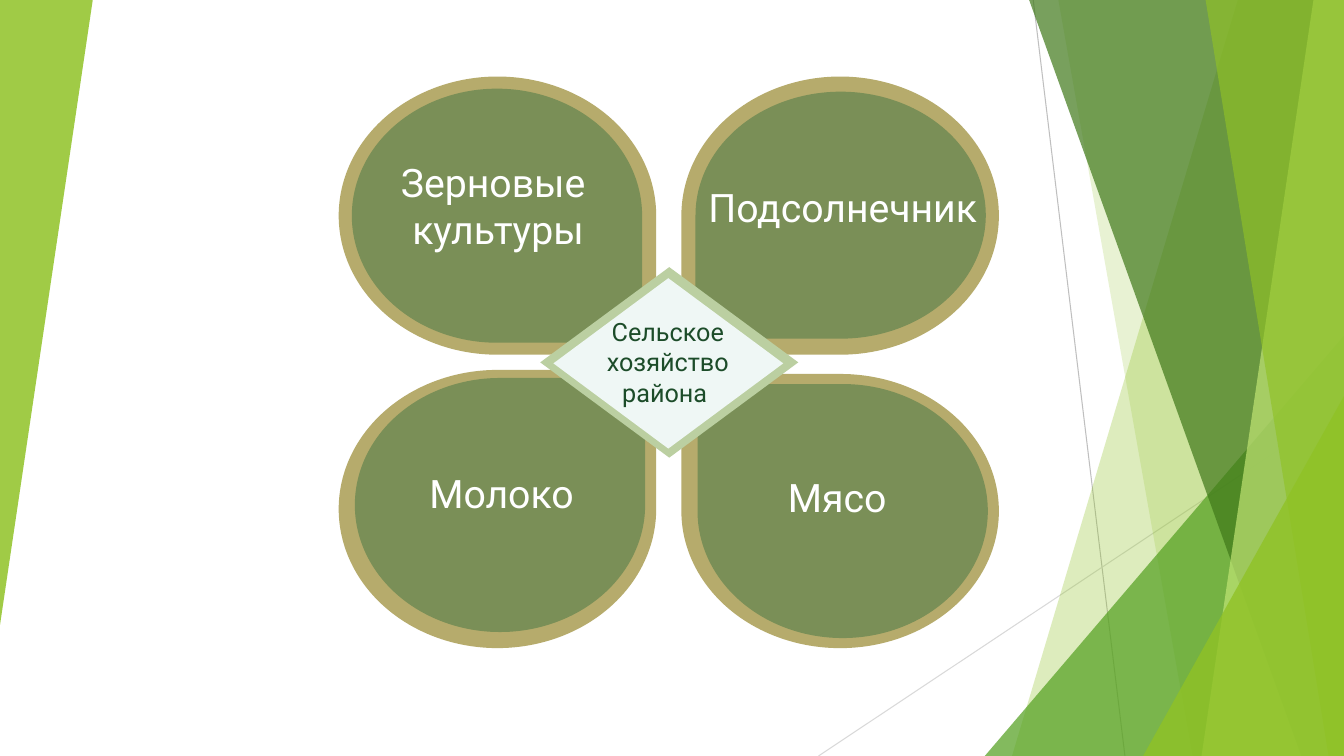
import pptx
import pptx.util
import pptx.dml.color
import pptx.enum.shapes
import pptx.enum.text
import pptx.oxml.ns
import pptx.oxml.xmlchemy
from collections import namedtuple

Box = namedtuple("Box", "left top width height")
SHAPE = pptx.enum.shapes.MSO_SHAPE
CELL = pptx.util.Inches(0.1)
COLUMNS, ROWS = 133.33, 75


def cells(count):
    """Turn a count of grid cells into a length."""
    return pptx.util.Emu(round(count * CELL))


def within(box, left, top, width, height):
    """Return a box placed relative to the corner of another."""
    return Box(box.left + left, box.top + top, width, height)


def color(hex_code):
    """Read a colour from its hex string."""
    return pptx.dml.color.RGBColor.from_string(hex_code)


def apply(target, values):
    """Set each attribute in a dict of format values."""
    for name, value in values.items():
        setattr(target, name, value)


def paint(shape, hex_code, opacity=100):
    """Give a shape a plain fill without line or shadow."""
    shape.shadow.inherit = False
    shape.line.fill.background()
    shape.fill.solid()
    shape.fill.fore_color.rgb = color(hex_code)
    if opacity < 100:
        tone = shape.element.spPr.find(".//" + pptx.oxml.ns.qn("a:srgbClr"))
        alpha = pptx.oxml.xmlchemy.OxmlElement("a:alpha")
        alpha.set("val", str(opacity * 1000))
        tone.append(alpha)


def add_preset(slide, preset, box, hex_code, opacity=100):
    """Draw a painted preset shape in a box."""
    shape = slide.shapes.add_shape(preset, *map(cells, box))
    paint(shape, hex_code, opacity)
    return shape


def add_label(slide, box, lines, size, hex_code):
    """Write centred lines in the middle of a box."""
    frame = slide.shapes.add_textbox(*map(cells, box)).text_frame
    apply(frame, {"word_wrap": True, "vertical_anchor": pptx.enum.text.MSO_ANCHOR.MIDDLE})
    frame.text = "\n".join(lines)
    for paragraph in frame.paragraphs:
        paragraph.alignment = pptx.enum.text.PP_ALIGN.CENTER
        for run in paragraph.runs:
            apply(run.font, {"name": "Roboto", "size": pptx.util.Pt(size)})
            run.font.color.rgb = color(hex_code)


def add_ray(slide, box, start, end, hex_code):
    """Draw a thin line between two points of a box."""
    points = [cells(corner + offset) for point in (start, end)
              for corner, offset in zip(box[:2], point)]
    ray = slide.shapes.add_connector(pptx.enum.shapes.MSO_CONNECTOR.STRAIGHT, *points)
    ray.line.color.rgb = color(hex_code)
    ray.line.width = pptx.util.Pt(0.75)
    ray.element.spPr.append(pptx.oxml.xmlchemy.OxmlElement("a:effectLst"))


def add_band(slide, box, top_left, bottom_left, hex_code, opacity):
    """Draw a band from a slanted left edge to the right side of a box."""
    right, bottom = box.left + box.width, box.top + box.height
    corners = [(box.left + top_left, box.top), (right, box.top),
               (right, bottom), (box.left + bottom_left, bottom)]
    points = [tuple(map(cells, corner)) for corner in corners]
    outline = slide.shapes.build_freeform(*points[0])
    outline.add_line_segments(points[1:], close=True)
    paint(outline.convert_to_shape(), hex_code, opacity)


def add_wedge(slide, box, hex_code, opacity):
    """Draw a triangle whose tip is over its right corner."""
    wedge = add_preset(slide, SHAPE.ISOSCELES_TRIANGLE, box, hex_code, opacity)
    wedge.adjustments[0] = 1
    return wedge


def add_facets(slide, box):
    """Draw the overlapping green facets and thin rays."""
    def corner_wedge(left, top, hex_code, opacity):
        """Draw a wedge that fills the lower right corner."""
        area = within(box, left, top, box.width - left, box.height - top)
        add_wedge(slide, area, hex_code, opacity)

    add_ray(slide, box, (21.3, 0), (30.4, box.height), "BFBFBF")
    add_ray(slide, box, (box.width, 40.3), (0, box.height), "D9D9D9")
    add_band(slide, box, 41.6, 19.2, "90C226", 30)
    add_band(slide, box, 23.8, 37.1, "90C226", 20)
    corner_wedge(16.5, 33.3, "54A021", 72)
    add_band(slide, box, 20.9, 47.9, "3F7819", 70)
    add_band(slide, box, 49.1, 38, "C0E474", 70)
    add_band(slide, box, 38.4, 50.6, "90C226", 65)
    corner_wedge(32.2, 39.3, "90C226", 80)


def add_petal(slide, box, core, label, lines, flips):
    """Draw a rimmed petal with its label."""
    for area, hex_code in ((box, "B6AB6C"), (within(box, *core), "7A8F57")):
        drop = add_preset(slide, SHAPE.TEAR, area, hex_code)
        frame = drop.element.spPr.find(pptx.oxml.ns.qn("a:xfrm"))
        for flip in flips:
            frame.set(flip, "1")
    add_label(slide, within(box, *label), lines, 28, "FFFFFF")


def add_flower(slide, box):
    """Draw four petals around a central diamond."""
    petals = [
        (0, 1, 27.6, (1.6, 0.8, 28.8, 25.2), (6.3, 5.5, 19.7, 13.4), ["Молоко"]),
        (0, 0, 27.6, (1.3, 1.2, 28.8, 25.2), (2.4, 7.1, 26.8, 11.3), ["Зерновые ", "культуры"]),
        (1, 1, 27.2, (1.6, 1, 28.8, 25.2), (5.8, 7.5, 19.3, 9.4), ["Мясо"]),
        (1, 0, 27.6, (1.4, 1.5, 28.8, 24.5), (-2.5, 8.6, 37, 8.7), ["Подсолнечник"]),
    ]
    width = 31.5
    for column, row, height, core, label, lines in petals:
        area = within(box, column * (box.width - width), row * (box.height - height),
                      width, height)
        flips = ["flipH"] * column + ["flipV"] * (1 - row)
        add_petal(slide, area, core, label, lines, flips)
    add_preset(slide, SHAPE.FLOWCHART_DECISION, within(box, 20, 18.9, 25.6, 18.9), "BBCFA1")
    add_preset(slide, SHAPE.FLOWCHART_DECISION, within(box, 21.3, 20, 22.8, 16.9), "EFF7F5")
    add_label(slide, within(box, 24.4, 23.6, 16.5, 9.4),
              ["Сельское хозяйство района "], 18, "1C4C29")


def main():
    """Build and save the slide."""
    deck = pptx.Presentation()
    apply(deck, {"slide_width": cells(COLUMNS), "slide_height": cells(ROWS)})
    slide = deck.slides.add_slide(deck.slide_layouts[6])
    add_facets(slide, Box(81.2, 0, COLUMNS - 81.2, ROWS))
    add_wedge(slide, Box(0, 0, 9.2, 62), "90C226", 85).rotation = 180
    add_flower(slide, Box(33.6, 7.6, 65.5, 56.7))
    deck.save("out.pptx")


if __name__ == "__main__":
    main()
